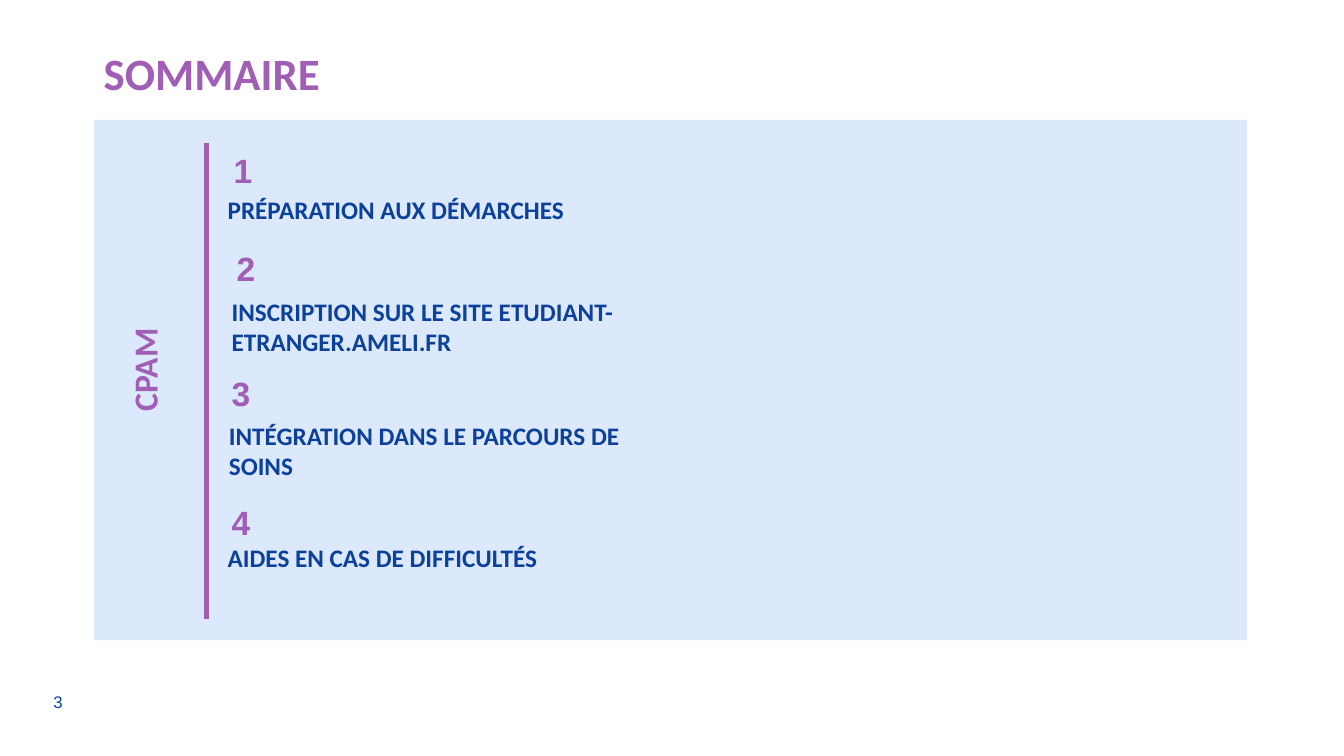
"""Build the summary slide: title, CPAM panel and four numbered topics."""
from lxml.etree import SubElement
from pptx import Presentation
from pptx.dml.color import RGBColor
from pptx.enum.shapes import MSO_CONNECTOR as CONNECTOR, MSO_SHAPE as SHAPE
from pptx.enum.text import MSO_ANCHOR as ANCHOR
from pptx.oxml.ns import qn
from pptx.util import Pt

PURPLE = RGBColor(0xA0, 0x5E, 0xB5)
NAVY = RGBColor(0x0C, 0x41, 0x9A)
PALE_BLUE = RGBColor(0xDC, 0xE8, 0xFC)

TITLE = "SOMMAIRE"
SECTION = "CPAM"
PAGE = "3"
TOPICS = [
    ("PRÉPARATION AUX DÉMARCHES", (159.8, 103.6), (155.5, 135.6), 1),
    ("INSCRIPTION SUR LE SITE ETUDIANT-ETRANGER.AMELI.FR", (162, 173.6), (158.4, 208.2), 2),
    ("INTÉGRATION DANS LE PARCOURS DE SOINS", (158.4, 262.8), (156.4, 296.8), 2),
    ("AIDES EN CAS DE DIFFICULTÉS", (158.4, 355), (155.5, 383.8), 1),
]
NUMBER_SIZE = (40.3, 36)
TOPIC_WIDTH, LINE_HEIGHT, PADDING = 301.7, 22, 7.2
PANEL = (67, 85.7, 823.7, 371.5)
RULE_X, RULE_TOP, RULE_BOTTOM = 147.6, 102.2, 442.1


def add_text(slide, text, place, size, color=PURPLE, font="Calibri", bold=True,
             anchor=ANCHOR.TOP):
    box = slide.shapes.add_textbox(*map(Pt, place))
    frame = box.text_frame
    frame.word_wrap = True
    frame.vertical_anchor = anchor
    run = frame.paragraphs[0].add_run()
    run.text = text
    run.font.name = font
    run.font.size = Pt(size)
    run.font.bold = bold
    run.font.color.rgb = color
    return box


def main():
    deck = Presentation()
    deck.slide_width, deck.slide_height = Pt(960), Pt(540)
    slide = deck.slides.add_slide(deck.slide_layouts[6])

    add_text(slide, PAGE, (31, 490.3, 56.9, 22.3), 12, NAVY, "Arial", False, ANCHOR.MIDDLE)

    panel = slide.shapes.add_shape(SHAPE.RECTANGLE, *map(Pt, PANEL))
    panel.shadow.inherit = False
    panel.fill.solid()
    panel.fill.fore_color.rgb = PALE_BLUE
    panel.line.fill.background()

    add_text(slide, TITLE, (67, 28.8, 296.6, 46), 32)

    rule = slide.shapes.add_connector(
        CONNECTOR.STRAIGHT, Pt(RULE_X), Pt(RULE_TOP), Pt(RULE_X), Pt(RULE_BOTTOM))
    rule.line.color.rgb = PURPLE
    rule.line.width = Pt(4)
    SubElement(rule.element.spPr, qn("a:effectLst"))

    section = add_text(slide, SECTION, (85, 186.5, 43.9, 114.5), 24)
    section.element.txBody.find(qn("a:bodyPr")).set("vert", "vert270")

    for number, (topic, number_at, topic_at, lines) in enumerate(TOPICS, 1):
        add_text(slide, str(number), number_at + NUMBER_SIZE, 24, font="Arial")
        height = lines * LINE_HEIGHT + PADDING
        add_text(slide, topic, topic_at + (TOPIC_WIDTH, height), 18, NAVY)

    deck.save("out.pptx")


if __name__ == "__main__":
    main()
